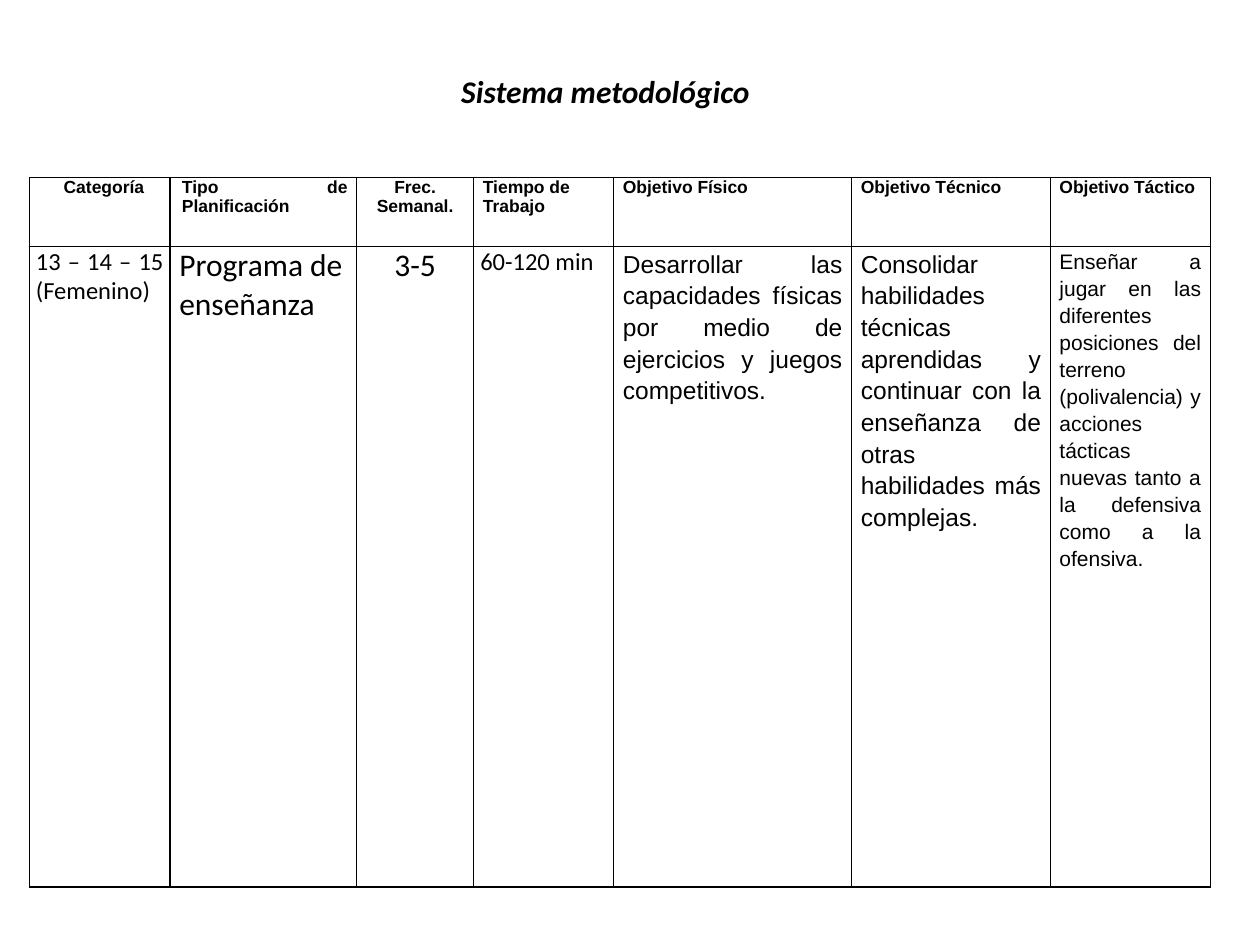
from lxml import etree
from pptx import Presentation
from pptx.dml.color import RGBColor
from pptx.enum.text import MSO_ANCHOR, PP_ALIGN
from pptx.oxml.ns import qn
from pptx.util import Pt

BLACK = RGBColor(0, 0, 0)
LEFT, CENTER, JUSTIFY = PP_ALIGN.LEFT, PP_ALIGN.CENTER, PP_ALIGN.JUSTIFY
TOP = MSO_ANCHOR.TOP


def write(paragraph, text, font, size, align, bold=False, italic=False):
    paragraph.alignment = align
    run = paragraph.add_run()
    run.text = text
    run.font.name = font
    run.font.size = Pt(size)
    run.font.bold = bold
    run.font.italic = italic
    run.font.color.rgb = BLACK


def add_borders(cell):
    properties = cell._tc.get_or_add_tcPr()
    for position, side in enumerate(("lnL", "lnR", "lnT", "lnB")):
        line = etree.Element(qn(f"a:{side}"), w=str(Pt(1)))
        fill = etree.SubElement(line, qn("a:solidFill"))
        etree.SubElement(fill, qn("a:srgbClr"), val=str(BLACK))
        properties.insert(position, line)


prs = Presentation()
prs.slide_width, prs.slide_height = Pt(720), Pt(540)
slide = prs.slides.add_slide(prs.slide_layouts[5])

# Title
title = slide.shapes.title
title.left, title.top, title.width, title.height = Pt(54), Pt(37.5), Pt(584), Pt(29)
title.text_frame.vertical_anchor = TOP
write(title.text_frame.paragraphs[0], "Sistema metodológico", "Calibri", 18, CENTER,
      bold=True, italic=True)

# Header cells: text, column width, alignment, indent
headers = [
    ("Categoría", 80.5, JUSTIFY, 14.4),
    ("Tipo de Planificación", 106.5, JUSTIFY, 1.5),
    ("Frec. Semanal.", 67, CENTER, 0),
    ("Tiempo de Trabajo", 80, LEFT, 0),
    ("Objetivo Físico", 136, JUSTIFY, 0),
    ("Objetivo Técnico", 113.5, JUSTIFY, 0),
    ("Objetivo Táctico", 91.5, JUSTIFY, 0),
]

# Programme cells: text, font, size, alignment, indent, side margin, line spacing
programme = [
    ("13 – 14 – 15 (Femenino)", "Calibri", 14, JUSTIFY, 0, 3.75, 1),
    ("Programa de enseñanza", "Calibri", 18, LEFT, 1.5, 3.75, 1),
    ("3-5", "Calibri", 18, CENTER, 0, 3.75, 1),
    ("60-120 min", "Calibri", 14, JUSTIFY, 0, 3.75, 1),
    ("Desarrollar las capacidades físicas por medio de ejercicios y juegos "
     "competitivos.", "Arial", 14, JUSTIFY, 0, 5.25, 1.15),
    ("Consolidar habilidades técnicas aprendidas y continuar con la enseñanza de "
     "otras habilidades más complejas.", "Arial", 14, JUSTIFY, 0, 5.25, 1.15),
    ("Enseñar a jugar en las diferentes posiciones del terreno (polivalencia) y "
     "acciones tácticas nuevas tanto a la defensiva como a la ofensiva.",
     "Arial", 12, JUSTIFY, 0, 5.25, 1.15),
]

# Table grid
table_width = sum(width for _, width, _, _ in headers)
table = slide.shapes.add_table(2, len(headers), Pt(16.75), Pt(101.5),
                               Pt(table_width), Pt(405.5)).table
table.first_row = table.horz_banding = False
table.rows[0].height, table.rows[1].height = Pt(39.5), Pt(366)
for column, (_, width, _, _) in zip(table.columns, headers):
    column.width = Pt(width)

# Table text
header_row = [(text, "Arial", 10, align, indent, 5.25, 1)
              for text, _, align, indent in headers]
for row, contents in enumerate((header_row, programme)):
    for col, (text, font, size, align, indent, margin, spacing) in enumerate(contents):
        cell = table.cell(row, col)
        cell.fill.background()
        add_borders(cell)
        cell.vertical_anchor = TOP
        cell.margin_left = cell.margin_right = Pt(margin)
        cell.margin_top = cell.margin_bottom = 0
        paragraph = cell.text_frame.paragraphs[0]
        paragraph.line_spacing = spacing
        paragraph._p.get_or_add_pPr().set("marL", str(Pt(indent)))
        write(paragraph, text, font, size, align, bold=row == 0)

prs.save("out.pptx")
